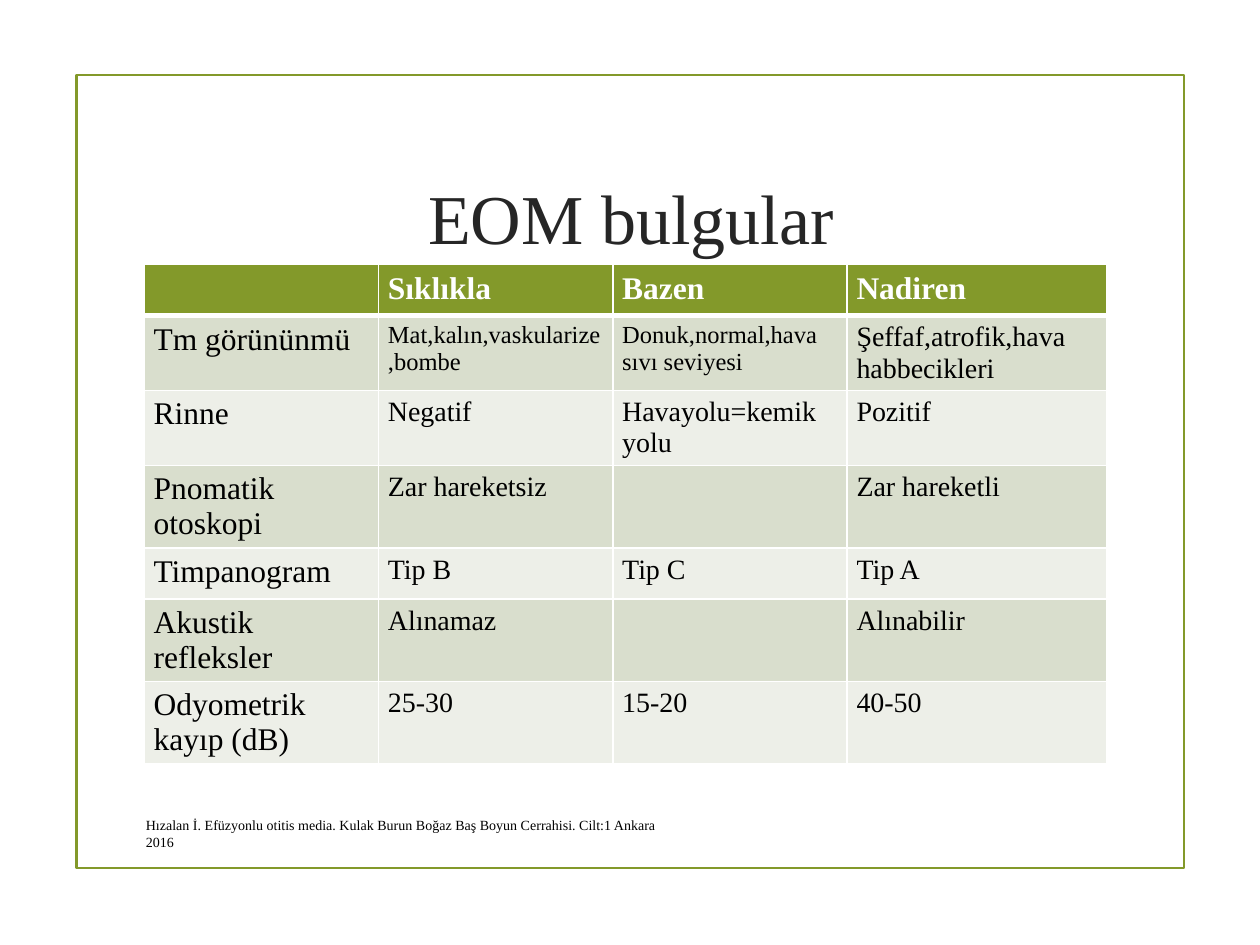
import pptx
import pptx.util
import pptx.dml.color
import pptx.enum.shapes
import pptx.enum.text
import pptx.oxml
import pptx.oxml.ns

Pt = pptx.util.Pt
RGB = pptx.dml.color.RGBColor
ALIGN = pptx.enum.text.PP_ALIGN
ANCHOR = pptx.enum.text.MSO_ANCHOR
FIT = pptx.enum.text.MSO_AUTO_SIZE

GREEN = RGB(0x83, 0x99, 0x2A)
SAGE = RGB(0xD9, 0xDE, 0xCD)
PALE = RGB(0xED, 0xEF, 0xE8)
DARK = RGB(0x26, 0x26, 0x26)
BLACK = RGB(0, 0, 0)
WHITE = RGB(0xFF, 0xFF, 0xFF)
FONT = "Times New Roman"


def write(frame, text, size=16, color=BLACK, bold=False, align=ALIGN.LEFT):
    frame.text = text
    par = frame.paragraphs[0]
    par.alignment = align
    font = par.runs[0].font if text else par.font
    font.name = FONT
    font.size = Pt(size)
    font.bold = bold
    font.color.rgb = color


def edge(cell, widths):
    """Draw white borders; widths are in points: left, right, top, bottom."""
    props = cell._tc.get_or_add_tcPr()
    for i, (side, width) in enumerate(zip("LRTB", widths)):
        props.insert(i, pptx.oxml.parse_xml(
            f'<a:ln{side} {pptx.oxml.ns.nsdecls("a")} w="{Pt(width)}">'
            f'<a:solidFill><a:srgbClr val="{WHITE}"/></a:solidFill></a:ln{side}>'))


deck = pptx.Presentation()
deck.slide_width = Pt(720)
deck.slide_height = Pt(540)
slide = deck.slides.add_slide(deck.slide_layouts[5])

# Title
title = slide.shapes.title
title.left, title.top, title.width, title.height = Pt(92.9), Pt(72), Pt(535.7), Pt(103)
write(title.text_frame, "EOM bulgular", size=40, color=DARK, align=ALIGN.CENTER)
title.text_frame.vertical_anchor = ANCHOR.MIDDLE
title.text_frame.auto_size = FIT.NONE

# Frame around the page
border = slide.shapes.add_shape(
    pptx.enum.shapes.MSO_SHAPE.RECTANGLE, Pt(43.7), Pt(42.7), Pt(633), Pt(453.6))
border.shadow.inherit = False
border.fill.background()
border.line.color.rgb = GREEN
border.line.width = Pt(1.25)

# Findings
rows = [
    ("", "Sıklıkla", "Bazen", "Nadiren"),
    ("Tm görününmü", "Mat,kalın,vaskularize,bombe",
     "Donuk,normal,hava sıvı seviyesi", "Şeffaf,atrofik,hava habbecikleri"),
    ("Rinne", "Negatif", "Havayolu=kemik yolu", "Pozitif"),
    ("Pnomatik otoskopi", "Zar hareketsiz", "", "Zar hareketli"),
    ("Timpanogram", "Tip B", "Tip C", "Tip A"),
    ("Akustik refleksler", "Alınamaz", "", "Alınabilir"),
    ("Odyometrik kayıp (dB)", "25-30", "15-20", "40-50"),
]
small = {(1, 1), (1, 2)}
holder = slide.shapes.add_table(
    len(rows), 4, Pt(82.4), Pt(151.2), Pt(550), Pt(301))
table = holder.table
for col, width in zip(table.columns, (133.9, 133.9, 133.9, 148.3)):
    col.width = Pt(width)
for r, row in enumerate(rows):
    table.rows[r].height = Pt(29.2)
    head = r == 0
    for c, text in enumerate(row):
        cell = table.cell(r, c)
        cell.margin_left = cell.margin_right = Pt(5.4)
        cell.margin_top = cell.margin_bottom = Pt(3.6)
        size = 18 if head or c == 0 else 14 if (r, c) in small else 16
        write(cell.text_frame, text, size=size,
              color=WHITE if head else BLACK, bold=head)
        cell.fill.solid()
        cell.fill.fore_color.rgb = GREEN if head else SAGE if r % 2 else PALE
        edge(cell, (1, 1, 3 if r == 1 else 1, 3 if head else 1))
holder.height = Pt(301)

# Source
note = slide.shapes.add_textbox(Pt(76.3), Pt(463), Pt(312.5), Pt(17.3))
note.text_frame.word_wrap = True
note.text_frame.auto_size = FIT.SHAPE_TO_FIT_TEXT
write(note.text_frame, "Hızalan İ. Efüzyonlu otitis media. Kulak Burun Boğaz Baş "
      "Boyun Cerrahisi. Cilt:1 Ankara 2016", size=8)

deck.save("out.pptx")
